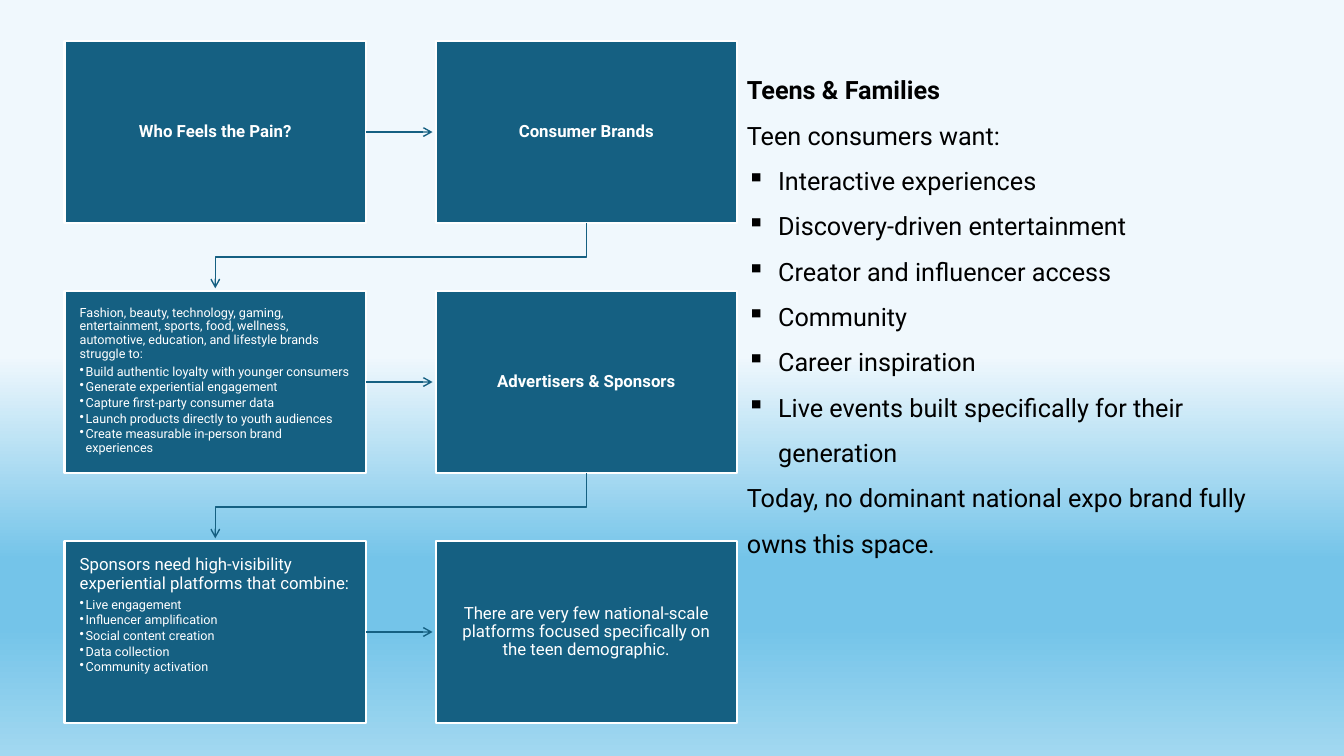
"""Build the slide on who feels the pain: a six-step flow beside a list of teen wants."""
from dataclasses import dataclass, field
from typing import Any

from lxml import etree
from pptx import Presentation
from pptx.dml.color import RGBColor
from pptx.enum import shapes, text
from pptx.oxml import ns
from pptx.util import Inches, Pt


@dataclass(frozen=True)
class Theme:
    """Colours, font and type sizes."""
    font: str = "Roboto"
    box: str = "156082"
    light: str = "FFFFFF"
    dark: str = "000000"
    large: float = 18
    medium: float = 12
    small: float = 9
    sky: tuple = ((47, "F0F8FD"), (74, "74C4E9"), (83, "74C4E9"), (100, "A2D8F0"))


@dataclass(frozen=True)
class Line:
    """One paragraph and its look."""
    words: str
    size: float
    bold: bool = False
    bullet: str = ""
    indent: float = 0
    level: int = 0
    format: dict[str, Any] = field(default_factory=dict)


@dataclass(frozen=True)
class Step:
    """One box of the flow."""
    lines: list[Line]
    listed: bool = False


THEME = Theme()
LEFT, TOP, WIDTH, HEIGHT = 0.64, 0.41, 2.99, 1.8
COLUMN_PITCH, ROW_PITCH = 3.68, 2.48
ARROW_LENGTH, ELBOW_DROP, ELBOW_HEIGHT = 0.66, 0.34, 0.65


def lead(words: str, size: float = THEME.medium, bold: bool = False, centred: bool = True) -> Line:
    """Return the opening paragraph of a step."""
    align = text.PP_ALIGN.CENTER if centred else text.PP_ALIGN.LEFT
    return Line(words, size, bold,
                format={"alignment": align, "line_spacing": 0.9, "space_after": Pt(0.35 * size)})


def points(*items: str) -> list[Line]:
    """Return the small bulleted paragraphs of a step."""
    spacing = {"alignment": text.PP_ALIGN.LEFT, "line_spacing": 0.9,
               "space_after": Pt(0.15 * THEME.small)}
    return [Line(item, THEME.small, False, "•", 0.06, 1, spacing) for item in items]


def want(words: str, bullet: str = "") -> Line:
    """Return one paragraph of the teen list."""
    return Line(words, THEME.large, bullet=bullet, indent=0.31 if bullet else 0,
                format={"line_spacing": 1.5})


STEPS = [
    Step([lead("Who Feels the Pain?", bold=True)]),
    Step([lead("Consumer Brands", bold=True)]),
    Step([lead("Fashion, beauty, technology, gaming, entertainment, sports, food, wellness, "
               "automotive, education, and lifestyle brands struggle to:", THEME.small, centred=False),
          *points("Build authentic loyalty with younger consumers",
                  "Generate experiential engagement",
                  "Capture first-party consumer data",
                  "Launch products directly to youth audiences",
                  "Create measurable in-person brand experiences")], True),
    Step([lead("Advertisers & Sponsors", bold=True)]),
    Step([lead("Sponsors need high-visibility experiential platforms that combine:", centred=False),
          *points("Live engagement", "Influencer amplification", "Social content creation",
                  "Data collection", "Community activation")], True),
    Step([lead("There are very few national-scale platforms focused specifically "
               "on the teen demographic.")]),
]

TEENS = [
    Line("Teens & Families", THEME.large, True),
    want("Teen consumers want:"),
    *(want(words, "▪") for words in (
        "Interactive experiences", "Discovery-driven entertainment",
        "Creator and influencer access", "Community", "Career inspiration",
        "Live events built specifically for their generation")),
    want("Today, no dominant national expo brand fully owns this space."),
]


def apply(target: Any, values: dict[str, Any]) -> None:
    """Set each named attribute on the target."""
    for name, value in values.items():
        setattr(target, name, value)


def write(frame: Any, lines: list[Line], colour: str) -> None:
    """Fill a text frame with paragraphs."""
    for index, line in enumerate(lines):
        paragraph = frame.add_paragraph() if index else frame.paragraphs[0]
        if line.bullet:
            props = paragraph._p.get_or_add_pPr()
            props.set("marL", str(Inches(line.indent)))
            props.set("indent", str(-Inches(line.indent)))
            etree.SubElement(props, ns.qn("a:buChar"), char=line.bullet)
        apply(paragraph, {"level": line.level, **line.format})
        run = paragraph.add_run()
        run.text = line.words
        apply(run.font, {"name": THEME.font, "size": Pt(line.size), "bold": line.bold})
        run.font.color.rgb = RGBColor.from_string(colour)


def paint_sky(slide: Any) -> None:
    """Give the slide its vertical gradient."""
    fill = slide.background.fill
    fill.gradient()
    fill.gradient_angle = 270
    stops = slide._element.find(".//" + ns.qn("a:gsLst"))
    for stop in list(stops):
        stops.remove(stop)
    for position, colour in THEME.sky:
        stop = etree.SubElement(stops, ns.qn("a:gs"), pos=str(position * 1000))
        etree.SubElement(stop, ns.qn("a:srgbClr"), val=colour)


def draw_step(slide: Any, step: Step, left: float, top: float) -> Any:
    """Draw one box of the flow."""
    box = slide.shapes.add_shape(shapes.MSO_SHAPE.RECTANGLE, Inches(left), Inches(top),
                                 Inches(WIDTH), Inches(HEIGHT))
    box.shadow.inherit = False
    box.fill.solid()
    box.fill.fore_color.rgb = RGBColor.from_string(THEME.box)
    box.line.color.rgb = RGBColor.from_string(THEME.light)
    box.line.width = Pt(1.5)
    margins = {f"margin_{side}": Inches(0.15) for side in ("left", "top", "right", "bottom")}
    anchor = text.MSO_ANCHOR.TOP if step.listed else text.MSO_ANCHOR.MIDDLE
    apply(box.text_frame, {"word_wrap": True, "vertical_anchor": anchor, **margins})
    write(box.text_frame, step.lines, THEME.light)
    return box


def style_arrow(arrow: Any) -> None:
    """Colour a line and give it an open arrowhead."""
    arrow.line.color.rgb = RGBColor.from_string(THEME.box)
    arrow.line.width = Pt(1)
    etree.SubElement(arrow.line._get_or_add_ln(), ns.qn("a:tailEnd"), type="arrow")


def draw_across(slide: Any, box: Any) -> None:
    """Draw the arrow from a box to its right neighbour."""
    start, middle = box.left + box.width, box.top + box.height // 2
    arrow = slide.shapes.add_connector(shapes.MSO_CONNECTOR.STRAIGHT, start, middle,
                                       start + Inches(ARROW_LENGTH), middle)
    arrow.begin_connect(box, 3)
    style_arrow(arrow)
    etree.SubElement(arrow._element.spPr, ns.qn("a:effectLst"))


def draw_down(slide: Any, box: Any) -> None:
    """Draw the bent arrow from a box to the start of the next row."""
    x, y = box.left + box.width // 2, box.top + box.height
    next_x, bend = x - Inches(COLUMN_PITCH), y + Inches(ELBOW_DROP)
    builder = slide.shapes.build_freeform(x, y)
    builder.add_line_segments([(x, bend), (next_x, bend), (next_x, y + Inches(ELBOW_HEIGHT))],
                              close=False)
    arrow = builder.convert_to_shape()
    arrow.shadow.inherit = False
    arrow.fill.background()
    style_arrow(arrow)


def main() -> None:
    """Build and save the slide."""
    deck = Presentation()
    apply(deck, {"slide_width": Inches(13.33), "slide_height": Inches(7.5)})
    slide = deck.slides.add_slide(deck.slide_layouts[6])
    paint_sky(slide)
    teens = slide.shapes.add_textbox(Inches(7.31), Inches(0.69), Inches(5.16), Inches(4.9))
    apply(teens.text_frame, {"word_wrap": True, "auto_size": text.MSO_AUTO_SIZE.SHAPE_TO_FIT_TEXT})
    write(teens.text_frame, TEENS, THEME.dark)
    for index, step in enumerate(STEPS):
        row, column = divmod(index, 2)
        box = draw_step(slide, step, LEFT + column * COLUMN_PITCH, TOP + row * ROW_PITCH)
        if column == 0:
            draw_across(slide, box)
        elif index < len(STEPS) - 1:
            draw_down(slide, box)
    deck.save("out.pptx")


if __name__ == "__main__":
    main()
